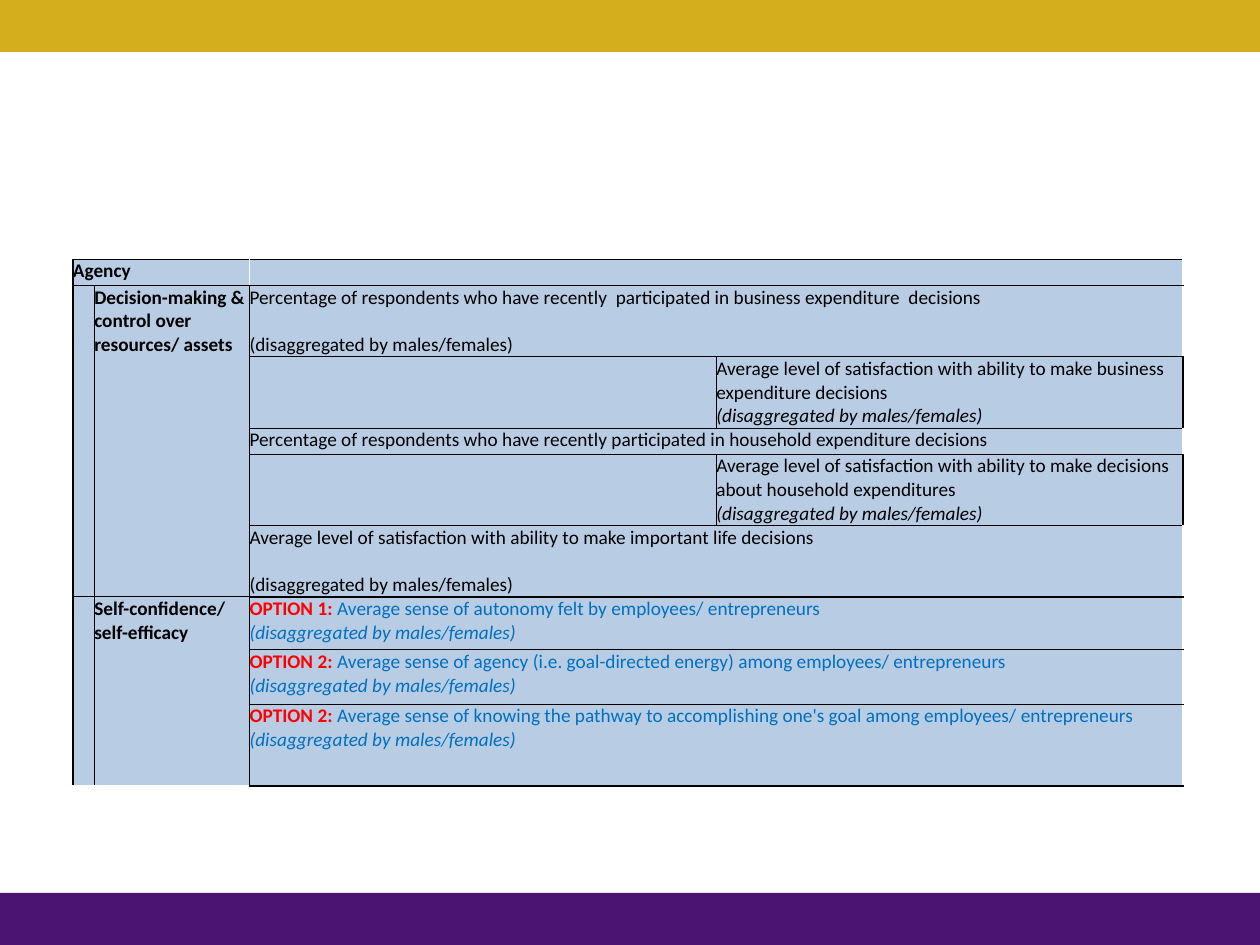
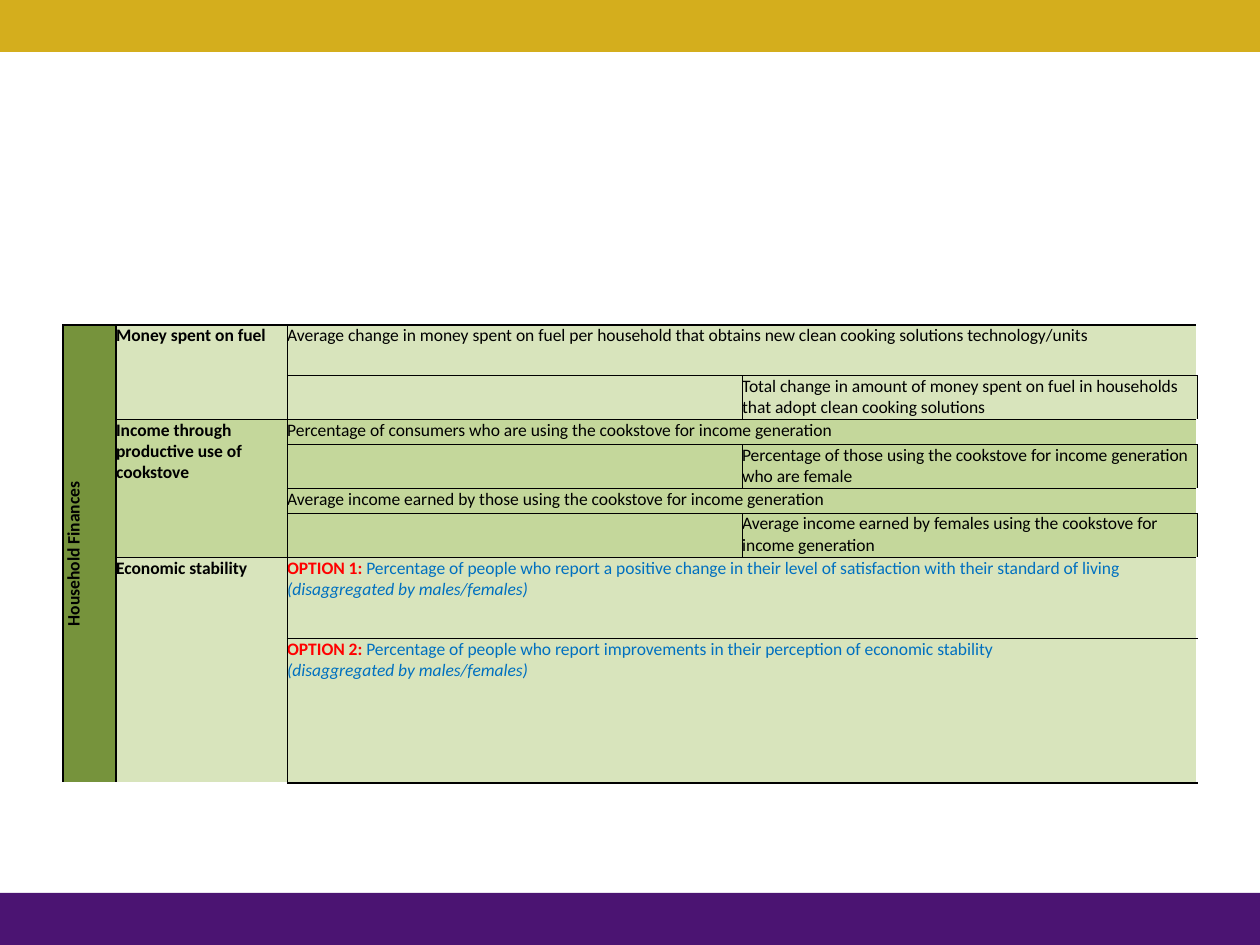
from dataclasses import dataclass
from itertools import product
from typing import NamedTuple

from lxml.etree import SubElement
from pptx import Presentation
from pptx.dml.color import RGBColor
from pptx.enum.shapes import MSO_SHAPE as Shape
from pptx.enum.text import MSO_ANCHOR as Anchor, PP_ALIGN as Align
from pptx.oxml.ns import qn
from pptx.util import Cm, Pt


@dataclass(frozen=True)
class Theme:
    font: str = "Calibri"
    gold: str = "D4AE1D"
    purple: str = "4B1472"
    black: str = "000000"
    red: str = "FF0000"
    blue: str = "0070C0"
    pale_blue: str = "B8CCE4"
    dark_green: str = "76933C"
    green: str = "C4D79B"
    pale_green: str = "D8E4BC"
    agency_size: float = 11
    finance_size: float = 10
    line_height: float = 1.22
    thin: float = 0.5
    thick: float = 1


THEME = Theme()
PAGE_WIDTH, PAGE_HEIGHT, BAND_HEIGHT = Cm(25.4), Cm(19.05), Cm(1.05)


class Span(NamedTuple):
    text: str
    color: str = THEME.black
    bold: bool = False
    italic: bool = False
    lead: str = ""


class Block(NamedTuple):
    row: int
    column: int
    fill: str
    spans: tuple[Span, ...] = ()
    rows: int = 1
    columns: int = 1
    thick_sides: str = ""
    upright: bool = False


class Grid(NamedTuple):
    left: float
    top: float
    columns: tuple[float, ...]
    rows: tuple[float, ...]
    size: float
    blocks: tuple[Block, ...]


BY_SEX = "(disaggregated by males/females)"
NOTE = Span(BY_SEX, italic=True, lead="line")
GAP_NOTE = Span(BY_SEX, lead="gap")


def label(text: str) -> tuple[Span, ...]:
    """Return a bold heading."""
    return (Span(text, bold=True),)


def plain(text: str, *notes: Span) -> tuple[Span, ...]:
    """Return an indicator with any notes below it."""
    return (Span(text), *notes)


def option(number: int, text: str) -> tuple[Span, ...]:
    """Return a numbered optional indicator with its note."""
    return (
        Span(f"OPTION {number}: ", THEME.red, bold=True),
        Span(text, THEME.blue),
        Span(BY_SEX, THEME.blue, italic=True, lead="line"),
    )


def agency_grid() -> Grid:
    """Describe the agency indicators."""
    fill = THEME.pale_blue

    def wide(row: int, spans: tuple[Span, ...], sides: str) -> Block:
        """Return an indicator across both right columns."""
        return Block(row, 2, fill, spans, columns=2, thick_sides=sides)

    def detail(row: int, text: str) -> Block:
        """Return an indicator in the last column."""
        return Block(row, 3, fill, plain(text, NOTE), thick_sides="R")

    return Grid(1.47, 5.23, (0.43, 3.13, 9.41, 9.41),
                (0.53, 0.53, 1.07, 0.53, 1.07, 0.56, 1.07, 1.09, 1.65),
                THEME.agency_size, (
        Block(0, 0, fill, label("Agency"), columns=2, thick_sides="LT"),
        wide(0, (), "TR"),
        Block(1, 0, fill, rows=5, thick_sides="L"),
        Block(1, 1, fill, label("Decision-making & control over resources/ assets"), rows=5),
        wide(1, plain("Percentage of respondents who have recently  participated in "
                      "business expenditure  decisions", GAP_NOTE), "R"),
        Block(2, 2, fill),
        detail(2, "Average level of satisfaction with ability to make business "
                  "expenditure decisions"),
        wide(3, plain("Percentage of respondents who have recently participated in "
                      "household expenditure decisions"), "R"),
        Block(4, 2, fill),
        detail(4, "Average level of satisfaction with ability to make decisions "
                  "about household expenditures"),
        wide(5, plain("Average level of satisfaction with ability to make important "
                      "life decisions", GAP_NOTE), "RB"),
        Block(6, 0, fill, rows=3, thick_sides="LB"),
        Block(6, 1, fill, label("Self-confidence/ self-efficacy"), rows=3, thick_sides="B"),
        wide(6, option(1, "Average sense of autonomy felt by employees/ entrepreneurs"), "T"),
        wide(7, option(2, "Average sense of agency (i.e. goal-directed energy) among "
                          "employees/ entrepreneurs"), ""),
        wide(8, option(2, "Average sense of knowing the pathway to accomplishing one's "
                          "goal among employees/ entrepreneurs"), "B"),
    ))


def finance_grid() -> Grid:
    """Describe the household finance indicators."""
    pale, green = THEME.pale_green, THEME.green

    def group(row: int, rows: int, fill: str, text: str) -> Block:
        """Return the heading of a group of rows."""
        return Block(row, 1, fill, label(text), rows=rows, thick_sides="LTB")

    def wide(row: int, fill: str, spans: tuple[Span, ...], sides: str = "") -> Block:
        """Return an indicator across both right columns."""
        return Block(row, 2, fill, spans, columns=2, thick_sides=sides)

    def detail(row: int, fill: str, text: str, sides: str = "") -> tuple[Block, Block]:
        """Return an empty cell and the indicator beside it."""
        return (Block(row, 2, fill, thick_sides=sides),
                Block(row, 3, fill, plain(text), thick_sides=sides))

    return Grid(1.27, 6.55, (1.07, 3.45, 9.17, 9.17),
                (1.02, 0.89, 0.5, 0.89, 0.5, 0.89, 1.63, 1.32),
                THEME.finance_size, (
        Block(0, 0, THEME.dark_green, label("Household Finances"), rows=8,
              thick_sides="LTRB", upright=True),
        group(0, 2, pale, "Money spent on fuel"),
        wide(0, pale, plain("Average change in money spent on fuel per household that "
                            "obtains new clean cooking solutions technology/units"), "T"),
        *detail(1, pale, "Total change in amount of money spent on fuel in households "
                         "that adopt clean cooking solutions", "B"),
        group(2, 4, green, "Income through productive use of cookstove"),
        wide(2, green, plain("Percentage of consumers who are using the cookstove for "
                             "income generation"), "T"),
        *detail(3, green, "Percentage of those using the cookstove for income "
                          "generation who are female"),
        wide(4, green, plain("Average income earned by those using the cookstove for "
                             "income generation")),
        *detail(5, green, "Average income earned by females using the cookstove for "
                          "income generation", "B"),
        group(6, 2, pale, "Economic stability"),
        wide(6, pale, option(1, "Percentage of people who report a positive change in "
                                "their level of satisfaction with their standard of living"), "T"),
        wide(7, pale, option(2, "Percentage of people who report improvements in their "
                                "perception of economic stability"), "B"),
    ))


def add_band(page, top: int, color: str) -> None:
    """Draw a full-width colour band."""
    band = page.shapes.add_shape(Shape.RECTANGLE, 0, top, PAGE_WIDTH, BAND_HEIGHT)
    band.shadow.inherit = False
    band.fill.solid()
    band.fill.fore_color.rgb = RGBColor.from_string(color)
    band.line.fill.background()


def add_border(cell, side: str, width: float) -> None:
    """Add a black line to one side of a cell."""
    properties = cell._tc.get_or_add_tcPr()
    line = SubElement(properties, qn(f"a:ln{side}"), w=str(int(Pt(width))))
    fill = SubElement(line, qn("a:solidFill"))
    SubElement(fill, qn("a:srgbClr"), val=THEME.black)


def write_spans(cell, spans: tuple[Span, ...], size: float) -> None:
    """Write styled spans into a cell."""
    para = cell.text_frame.paragraphs[0]
    for span in spans:
        if span.lead == "gap":
            para = cell.text_frame.add_paragraph()
            para.space_before = Pt(size * THEME.line_height)
        elif span.lead == "line":
            para.add_line_break()
        run = para.add_run()
        run.text = span.text
        run.font.name = THEME.font
        run.font.size = Pt(size)
        run.font.bold = span.bold
        run.font.italic = span.italic
        run.font.color.rgb = RGBColor.from_string(span.color)
    for line_break in para._p.findall(qn("a:br")):
        line_break.insert(0, line_break.makeelement(qn("a:rPr"), sz=str(int(size * 100))))
    SubElement(para._p, qn("a:endParaRPr"), sz=str(int(size * 100)))


def add_block(table, block: Block, size: float) -> None:
    """Merge, frame, fill and write one block of cells."""
    last_row = block.row + block.rows - 1
    last_column = block.column + block.columns - 1
    first = table.cell(block.row, block.column)
    if block.rows * block.columns > 1:
        first.merge(table.cell(last_row, last_column))
    for row, column in product(range(block.row, last_row + 1),
                               range(block.column, last_column + 1)):
        cell = table.cell(row, column)
        cell.margin_left = cell.margin_right = cell.margin_top = cell.margin_bottom = 0
        outer = {"L": column == block.column, "R": column == last_column,
                 "T": row == block.row, "B": row == last_row}
        for side, is_outer in outer.items():
            if is_outer:
                add_border(cell, side, THEME.thick if side in block.thick_sides else THEME.thin)
        cell.fill.solid()
        cell.fill.fore_color.rgb = RGBColor.from_string(block.fill)
        write_spans(cell, block.spans if cell.is_merge_origin or not cell.is_spanned else (), size)
    if block.upright:
        first._tc.get_or_add_tcPr().set("vert", "vert270")
        first.vertical_anchor = Anchor.MIDDLE
        first.text_frame.paragraphs[0].alignment = Align.CENTER


def add_grid(page, grid: Grid) -> None:
    """Draw a table of indicators."""
    frame = page.shapes.add_table(len(grid.rows), len(grid.columns), Cm(grid.left),
                                  Cm(grid.top), Cm(sum(grid.columns)), Cm(sum(grid.rows)))
    table = frame.table
    table.first_row = table.horz_banding = False
    for column, width in zip(table.columns, grid.columns):
        column.width = Cm(width)
    for row, height in zip(table.rows, grid.rows):
        row.height = Cm(height)
    for block in grid.blocks:
        add_block(table, block, grid.size)


def main() -> None:
    """Build and save the deck."""
    deck = Presentation()
    deck.slide_width, deck.slide_height = PAGE_WIDTH, PAGE_HEIGHT
    for grid in (agency_grid(), finance_grid()):
        page = deck.slides.add_slide(deck.slide_layouts[6])
        add_band(page, 0, THEME.gold)
        add_band(page, PAGE_HEIGHT - BAND_HEIGHT, THEME.purple)
        add_grid(page, grid)
    deck.save("out.pptx")


if __name__ == "__main__":
    main()
